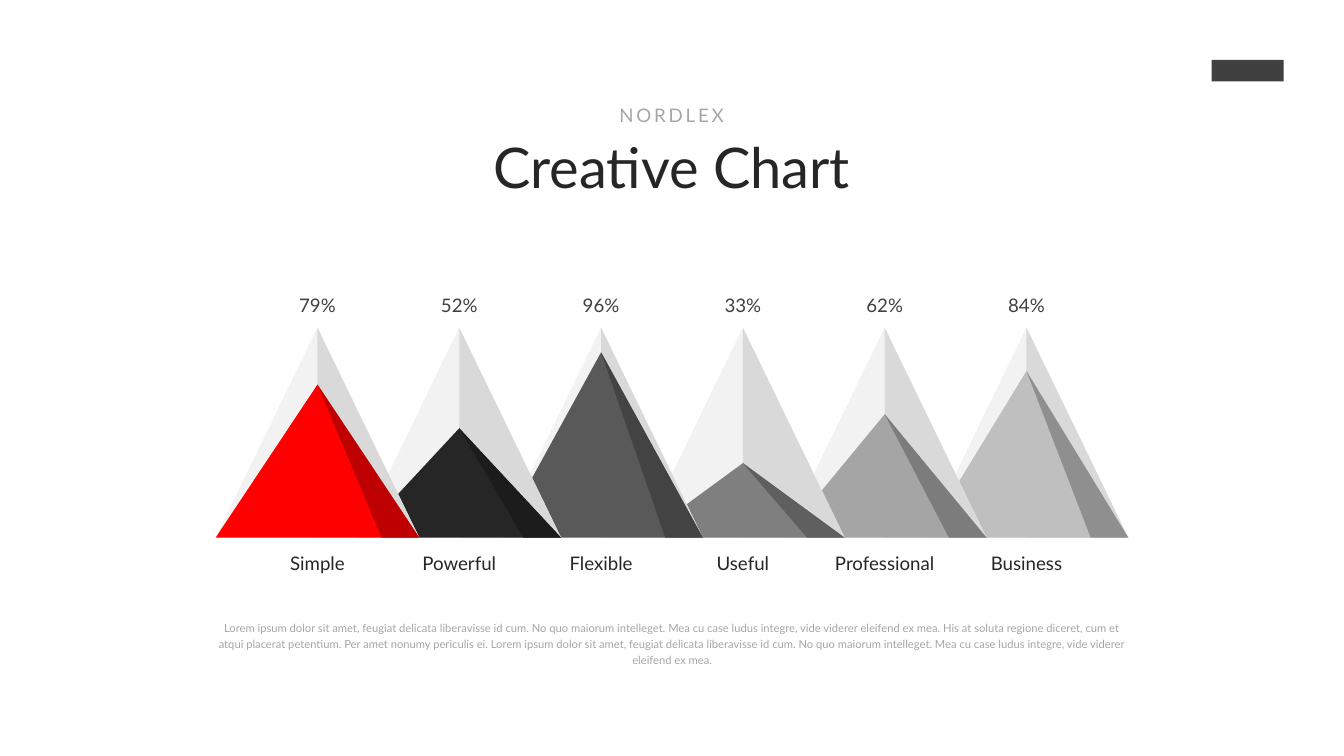
import dataclasses

import pptx
import pptx.dml.color
import pptx.enum.shapes
import pptx.enum.text
import pptx.util

Cm = pptx.util.Cm
Pt = pptx.util.Pt
RGB = pptx.dml.color.RGBColor


@dataclasses.dataclass(frozen=True)
class Theme:
    font: str = "Lato"
    ink: str = "262626"
    value: str = "404040"
    muted: str = "A6A6A6"
    back_light: str = "F2F2F2"
    back_dark: str = "D9D9D9"
    title: int = 60
    label: int = 20
    body: int = 12

    def shade(self, color):
        return str(RGB(*(round(c * 0.75) for c in RGB.from_string(color))))


class Deck:
    def __init__(self, theme, width, height):
        self.theme = theme
        self.prs = pptx.Presentation()
        self.prs.slide_width = Cm(width)
        self.prs.slide_height = Cm(height)
        self.s = None

    def add_slide(self):
        self.s = self.prs.slides.add_slide(self.prs.slide_layouts[6])

    def paint(self, sp, color):
        sp.shadow.inherit = False
        sp.fill.solid()
        sp.fill.fore_color.rgb = RGB.from_string(color)
        sp.line.fill.background()

    def block(self, x, y, w, h, color):
        kind = pptx.enum.shapes.MSO_SHAPE.RECTANGLE
        self.paint(self.s.shapes.add_shape(kind, Cm(x), Cm(y), Cm(w), Cm(h)), color)

    def triangle(self, points, color):
        first, *rest = [(Cm(x), Cm(y)) for x, y in points]
        builder = self.s.shapes.build_freeform(*first)
        builder.add_line_segments(rest, close=True)
        self.paint(builder.convert_to_shape(), color)

    def text(self, x, y, w, h, lines, line_spacing=None):
        sp = self.s.shapes.add_textbox(Cm(x), Cm(y), Cm(w), Cm(h))
        tf = sp.text_frame
        tf.word_wrap = True
        tf.auto_size = pptx.enum.text.MSO_AUTO_SIZE.SHAPE_TO_FIT_TEXT
        tf.text = "\n".join(line[0] for line in lines)
        for p, (_, size, color, before, tracking) in zip(tf.paragraphs, lines):
            p.alignment = pptx.enum.text.PP_ALIGN.CENTER
            p.space_before = Pt(before)
            p.line_spacing = line_spacing
            r = p.runs[0]
            r.font.name = self.theme.font
            r.font.size = Pt(size)
            r.font.color.rgb = RGB.from_string(color)
            if tracking:
                r._r.get_or_add_rPr().set("spc", str(tracking * 100))

    def peak(self, center, base, half, full, height, foot, color):
        t = self.theme
        left, right = (center - half, base), (center + half, base)
        top, tip = (center, base - full), (center, base - height)
        self.triangle([left, top, right], t.back_light)
        self.triangle([(center, base), top, right], t.back_dark)
        self.triangle([left, tip, right], color)
        self.triangle([tip, (center + foot, base), right], t.shade(color))


PEAKS = [
    ("Simple", "79%", 5.79, "FF0000"),
    ("Powerful", "52%", 4.14, "262626"),
    ("Flexible", "96%", 7.01, "595959"),
    ("Useful", "33%", 2.82, "7F7F7F"),
    ("Professional", "62%", 4.67, "A5A5A5"),
    ("Business", "84%", 6.3, "BFBFBF"),
]
FIRST_CENTER, PITCH = 12, 5.36
BASE, HALF, FULL, FOOT = 20.33, 3.85, 7.94, 2.43
LABEL_W, VALUE_W, LABEL_H = 5.51, 3.89, 1.11
BODY = (
    "Lorem ipsum dolor sit amet, feugiat delicata liberavisse id cum. "
    "No quo maiorum intelleget. Mea cu case ludus integre, vide viderer "
    "eleifend ex mea. His at soluta regione diceret, cum et atqui placerat "
    "petentium. Per amet nonumy periculis ei. Lorem ipsum dolor sit amet, "
    "feugiat delicata liberavisse id cum. No quo maiorum intelleget. Mea cu "
    "case ludus integre, vide viderer eleifend ex mea."
)


def main():
    t = Theme()
    deck = Deck(t, 50.8, 28.58)
    deck.add_slide()
    deck.block(45.8, 2.26, 2.72, 0.82, t.value)

    columns = [(FIRST_CENTER + i * PITCH, *peak) for i, peak in enumerate(PEAKS)]
    for center, _, _, height, color in reversed(columns):
        deck.peak(center, BASE, HALF, FULL, height, FOOT, color)
    for center, name, value, _, _ in columns:
        deck.text(center - LABEL_W / 2, 20.75, LABEL_W, LABEL_H,
                  [(name, t.label, t.ink, 6, 0)])
        deck.text(center - VALUE_W / 2, 10.97, VALUE_W, LABEL_H,
                  [(value, t.label, t.value, 6, 0)])

    deck.text(15.16, 3.81, 20.45, 3.89, [
        ("NORDLEX", t.label, t.muted, 12, 3),
        ("Creative Chart", t.title, t.ink, 6, 0),
    ])
    deck.text(8, 23.27, 34.82, 2.11, [(BODY, t.body, t.muted, 12, 0)], line_spacing=1.2)
    deck.prs.save("out.pptx")


if __name__ == "__main__":
    main()
